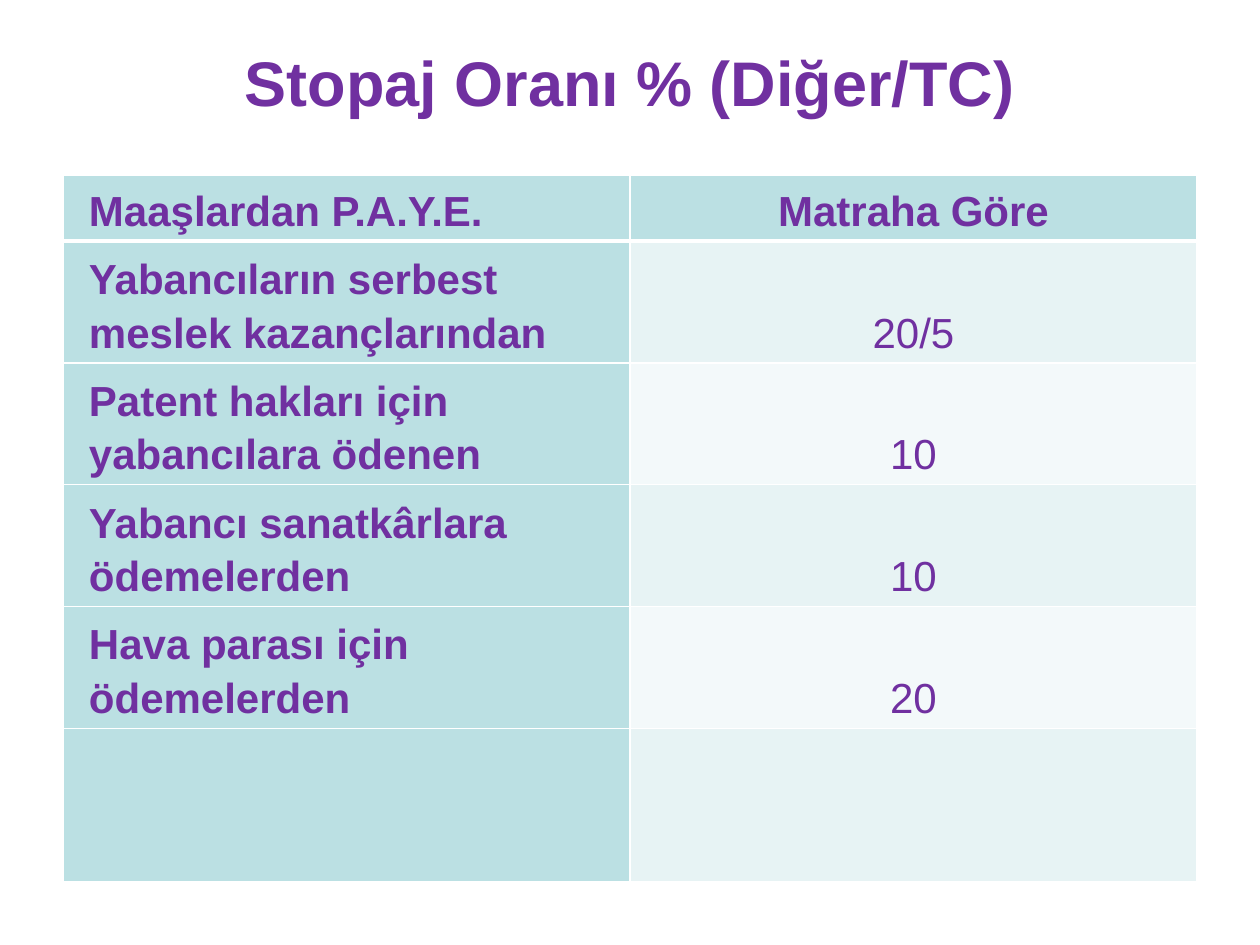
import pptx
import pptx.dml.color
import pptx.enum.text
import pptx.util
from lxml import etree
from pptx.oxml.ns import qn

SCALE = 914400 / 126
FONT = "Arial"
COLORS = {
    "text": "7030A0",
    "label": "BBE0E3",
    "odd": "E7F3F4",
    "even": "F3F9FA",
    "border": "FFFFFF",
}
ROWS = [
    ("Maaşlardan P.A.Y.E.", "Matraha Göre"),
    ("Yabancıların serbest meslek kazançlarından", "20/5"),
    ("Patent hakları için yabancılara ödenen", "10"),
    ("Yabancı sanatkârlara ödemelerden", "10"),
    ("Hava parası için ödemelerden", "20"),
    ("", ""),
]
ROW_HEIGHTS = [66, 121, 121, 121, 121, 153]
ALIGN = pptx.enum.text.PP_ALIGN
ANCHOR = pptx.enum.text.MSO_ANCHOR


def px(length):
    return pptx.util.Emu(round(length * SCALE))


def rgb(name):
    return pptx.dml.color.RGBColor.from_string(COLORS[name])


def add_run(paragraph, text, size, bold):
    run = paragraph.add_run()
    run.text = text
    run.font.name = FONT
    run.font.size = pptx.util.Pt(size)
    run.font.bold = bold
    run.font.color.rgb = rgb("text")


def add_title(slide, text):
    shape = slide.shapes.add_textbox(px(63), px(38), px(1134), px(87))
    frame = shape.text_frame
    frame.word_wrap = True
    frame.vertical_anchor = ANCHOR.MIDDLE
    paragraph = frame.paragraphs[0]
    paragraph.alignment = ALIGN.CENTER
    add_run(paragraph, text, 36, True)


def set_borders(cell, widths):
    properties = cell._tc.get_or_add_tcPr()
    for position, (side, width) in enumerate(widths.items()):
        line = etree.Element(qn(f"a:{side}"), w=str(pptx.util.Pt(width)))
        fill = etree.SubElement(line, qn("a:solidFill"))
        etree.SubElement(fill, qn("a:srgbClr"), val=COLORS["border"])
        properties.insert(position, line)


def fill_cell(cell, text, row, column):
    is_heading = row == 0 or column == 0
    cell.fill.solid()
    cell.fill.fore_color.rgb = rgb("label" if is_heading else "odd" if row % 2 else "even")
    # A thicker rule separates the header from the body
    set_borders(cell, {"lnL": 1, "lnR": 1, "lnT": 3 if row == 1 else 1, "lnB": 3 if row == 0 else 1})
    if not text:
        return
    cell.vertical_anchor = ANCHOR.BOTTOM
    cell.margin_left = cell.margin_right = px(26)
    # The line spacing already leaves room above the first line
    cell.margin_top = 0
    cell.margin_bottom = px(6)
    paragraph = cell.text_frame.paragraphs[0]
    paragraph.alignment = ALIGN.CENTER if column else ALIGN.LEFT
    paragraph.line_spacing = 1.15
    add_run(paragraph, text, 24, is_heading)


def add_rate_table(slide):
    frame = slide.shapes.add_table(len(ROWS), 2, px(63), px(175), px(1134), px(sum(ROW_HEIGHTS)))
    table = frame.table
    for row, (texts, height) in enumerate(zip(ROWS, ROW_HEIGHTS)):
        table.rows[row].height = px(height)
        for column, text in enumerate(texts):
            fill_cell(table.cell(row, column), text, row, column)


def main():
    presentation = pptx.Presentation()
    presentation.slide_width = px(1260)
    presentation.slide_height = px(945)
    slide = presentation.slides.add_slide(presentation.slide_layouts[6])
    add_title(slide, "Stopaj Oranı % (Diğer/TC)")
    add_rate_table(slide)
    presentation.save("out.pptx")


if __name__ == "__main__":
    main()
